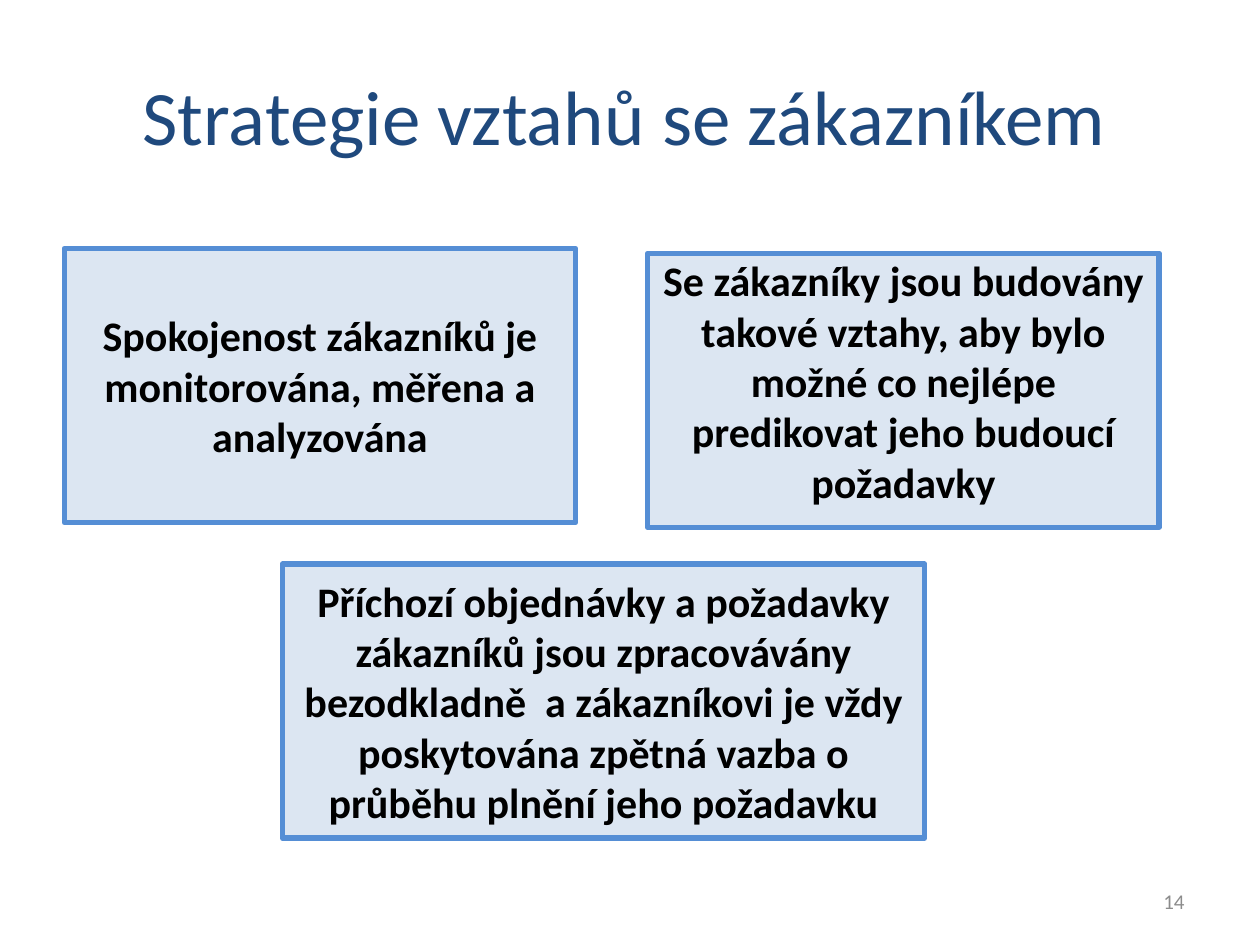
from dataclasses import dataclass

import pptx
import pptx.dml.color
import pptx.enum.shapes
import pptx.enum.text
import pptx.util

Inches = pptx.util.Inches
ALIGN = pptx.enum.text.PP_ALIGN
MIDDLE = pptx.enum.text.MSO_ANCHOR.MIDDLE
WIDTH, HEIGHT = 10, 7.5


@dataclass(frozen=True)
class Theme:
    font: str = "Calibri"
    title_color: str = "1F497D"
    text_color: str = "000000"
    number_color: str = "8C8C8C"
    box_fill: str = "DCE6F2"
    box_line: str = "558ED5"
    line_width: float = 3
    title_size: int = 44
    box_size: int = 24
    number_size: int = 12


@dataclass(frozen=True)
class Area:
    """Position and size as shares of the slide."""
    left: float
    top: float
    width: float
    height: float

    def lengths(self) -> dict:
        return {
            "left": Inches(self.left * WIDTH),
            "top": Inches(self.top * HEIGHT),
            "width": Inches(self.width * WIDTH),
            "height": Inches(self.height * HEIGHT),
        }


@dataclass(frozen=True)
class StatementBox:
    text: str
    left: float
    top: float
    width: float = 0.406
    margin_top: float = 0.05
    margin_bottom: float = 0.05


THEME = Theme()
BOX_HEIGHT = 0.29
TITLE_AREA = Area(0.083, 0.053, 0.839, 0.137)
NUMBER_AREA = Area(0.717, 0.927, 0.233, 0.053)
BOXES = [
    StatementBox("Spokojenost zákazníků je monitorována, měřena a analyzována",
                 0.051, 0.263),
    # The longest text for its width sits close to the top edge
    StatementBox("Se zákazníky jsou budovány takové vztahy, aby bylo možné co "
                 "nejlépe predikovat jeho budoucí požadavky",
                 0.514, 0.268, margin_top=0, margin_bottom=0.15),
    StatementBox("Příchozí objednávky a požadavky zákazníků jsou zpracovávány "
                 "bezodkladně  a zákazníkovi je vždy poskytována zpětná vazba o "
                 "průběhu plnění jeho požadavku",
                 0.224, 0.597, width=0.51),
]


def set_attributes(target, values: dict) -> None:
    for name, value in values.items():
        setattr(target, name, value)


def write_text(shape, text: str, size: int, color: str,
               alignment=ALIGN.CENTER, bold: bool = False) -> None:
    frame = shape.text_frame
    set_attributes(frame, {
        "text": text,
        "word_wrap": True,
        "auto_size": pptx.enum.text.MSO_AUTO_SIZE.NONE,
        "vertical_anchor": MIDDLE,
    })
    paragraph = frame.paragraphs[0]
    paragraph.alignment = alignment
    font = paragraph.runs[0].font
    set_attributes(font, {"name": THEME.font, "size": pptx.util.Pt(size), "bold": bold})
    font.color.rgb = pptx.dml.color.RGBColor.from_string(color)


def draw_box(slide, box: StatementBox) -> None:
    area = Area(box.left, box.top, box.width, BOX_HEIGHT)
    shape = slide.shapes.add_shape(
        pptx.enum.shapes.MSO_SHAPE.RECTANGLE, **area.lengths())
    shape.shadow.inherit = False
    shape.fill.solid()
    shape.fill.fore_color.rgb = pptx.dml.color.RGBColor.from_string(THEME.box_fill)
    shape.line.color.rgb = pptx.dml.color.RGBColor.from_string(THEME.box_line)
    shape.line.width = pptx.util.Pt(THEME.line_width)
    write_text(shape, box.text, THEME.box_size, THEME.text_color, bold=True)
    set_attributes(shape.text_frame, {
        "margin_top": Inches(box.margin_top),
        "margin_bottom": Inches(box.margin_bottom),
    })


def main() -> None:
    presentation = pptx.Presentation()
    set_attributes(presentation, {
        "slide_width": Inches(WIDTH), "slide_height": Inches(HEIGHT)})
    slide = presentation.slides.add_slide(
        presentation.slide_layouts.get_by_name("Title Only"))

    # Title
    title = slide.shapes.title
    set_attributes(title, TITLE_AREA.lengths())
    write_text(title, "Strategie vztahů se zákazníkem ",
               THEME.title_size, THEME.title_color)

    # Statements
    for box in BOXES:
        draw_box(slide, box)

    # Slide number
    number = slide.shapes.add_textbox(**NUMBER_AREA.lengths())
    write_text(number, "14", THEME.number_size, THEME.number_color, ALIGN.RIGHT)

    presentation.save("out.pptx")


if __name__ == "__main__":
    main()
